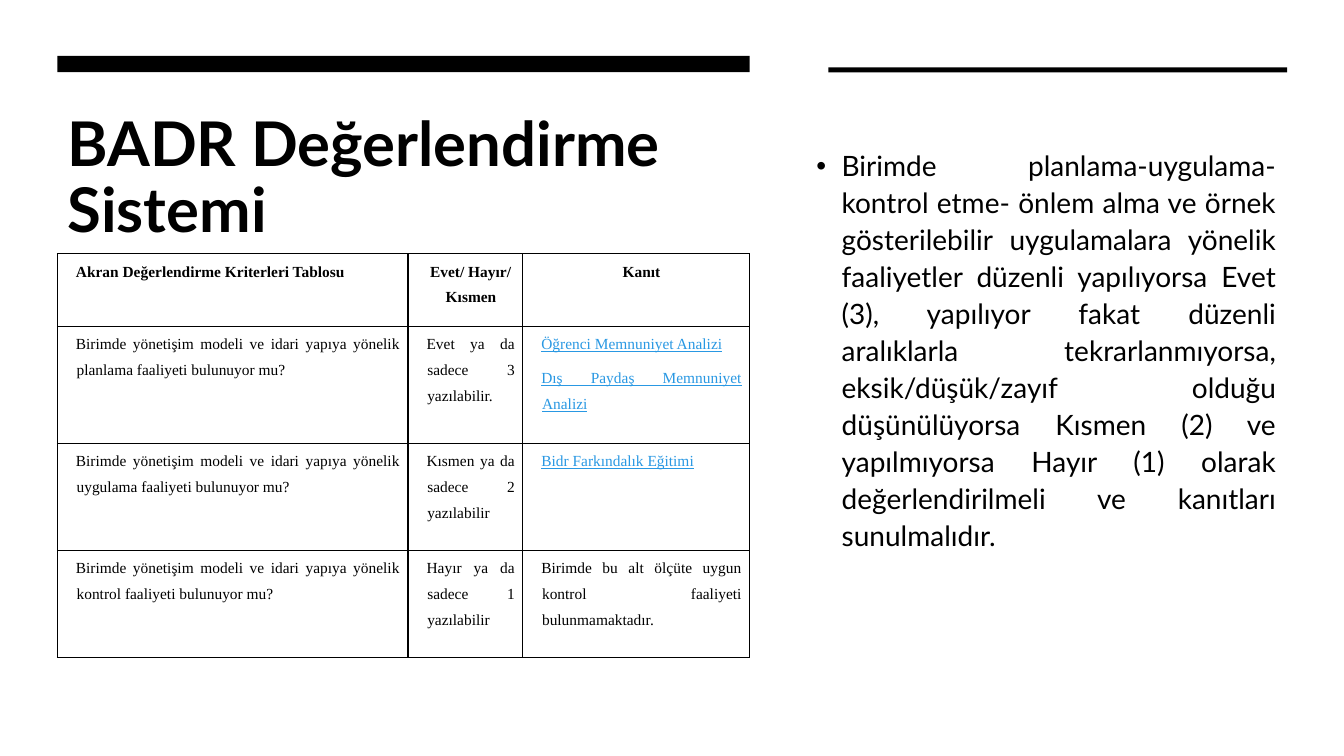
from lxml import etree
from pptx import Presentation
from pptx.dml.color import RGBColor
from pptx.enum.shapes import MSO_SHAPE
from pptx.enum.text import MSO_ANCHOR, MSO_AUTO_SIZE, PP_ALIGN
from pptx.oxml.ns import qn
from pptx.util import Pt

BLACK = RGBColor(0x00, 0x00, 0x00)
WHITE = RGBColor(0xFF, 0xFF, 0xFF)
LINK_BLUE = RGBColor(0x29, 0x98, 0xE3)
RECTANGLE = MSO_SHAPE.RECTANGLE
TOP = MSO_ANCHOR.TOP
NO_AUTOFIT = MSO_AUTO_SIZE.NONE
LEFT, CENTER, JUSTIFY = PP_ALIGN.LEFT, PP_ALIGN.CENTER, PP_ALIGN.JUSTIFY

HEADING_FONT = "Lato"
TABLE_FONT = "Times New Roman"

TITLE = "BADR Değerlendirme Sistemi"
EXPLANATION = (
    "Birimde planlama-uygulama-kontrol etme- önlem alma ve örnek gösterilebilir "
    "uygulamalara yönelik faaliyetler düzenli yapılıyorsa Evet (3), yapılıyor fakat "
    "düzenli aralıklarla tekrarlanmıyorsa, eksik/düşük/zayıf olduğu düşünülüyorsa "
    "Kısmen (2) ve yapılmıyorsa Hayır (1) olarak değerlendirilmeli ve kanıtları "
    "sunulmalıdır."
)
QUESTION = "Birimde yönetişim modeli ve idari yapıya yönelik {} faaliyeti bulunuyor mu?"
HEADERS = ["Akran Değerlendirme Kriterleri Tablosu", "Evet/ Hayır/ Kısmen", "Kanıt"]
CRITERIA = [
    ("planlama", "Evet ya da sadece 3 yazılabilir.",
     ["Öğrenci Memnuniyet Analizi", "Dış Paydaş Memnuniyet Analizi"], LINK_BLUE),
    ("uygulama", "Kısmen ya da sadece 2 yazılabilir",
     ["Bidr Farkındalık Eğitimi"], LINK_BLUE),
    ("kontrol", "Hayır ya da sadece 1 yazılabilir",
     ["Birimde bu alt ölçüte uygun kontrol faaliyeti bulunmamaktadır."], BLACK),
]
COLUMN_WIDTHS = [250.5, 82, 162]
ROW_HEIGHTS = [52, 83.5, 76.5, 76.5]


def place(shape, box):
    shape.left, shape.top, shape.width, shape.height = (Pt(length) for length in box)


def indent(paragraph, margin, first_line):
    properties = paragraph._p.get_or_add_pPr()
    properties.set("marL", str(Pt(margin)))
    properties.set("indent", str(Pt(first_line)))
    return properties


def add_run(paragraph, text, font_name, size, color=BLACK, bold=False):
    run = paragraph.add_run()
    run.text = text
    run.font.name = font_name
    run.font.size = Pt(size)
    run.font.bold = bold
    run.font.color.rgb = color
    return run


def add_bar(slide, box):
    bar = slide.shapes.add_shape(RECTANGLE, *(Pt(length) for length in box))
    bar.shadow.inherit = False
    bar.fill.solid()
    bar.fill.fore_color.rgb = BLACK
    bar.line.fill.background()


def fill_placeholder(placeholder, box, text, size, bold, alignment, spacing):
    place(placeholder, box)
    frame = placeholder.text_frame
    frame.word_wrap = True
    frame.auto_size = NO_AUTOFIT
    frame.vertical_anchor = TOP
    paragraph = frame.paragraphs[0]
    paragraph.alignment = alignment
    paragraph.line_spacing = spacing
    add_run(paragraph, text, HEADING_FONT, size, bold=bold)
    return paragraph


def add_cell_borders(cell):
    properties = cell._tc.get_or_add_tcPr()
    for position, side in enumerate(("a:lnL", "a:lnR", "a:lnT", "a:lnB")):
        line = etree.Element(qn(side), w=str(Pt(1)))
        fill = etree.SubElement(line, qn("a:solidFill"))
        etree.SubElement(fill, qn("a:srgbClr"), val=str(BLACK))
        properties.insert(position, line)


def fill_cell(cell, texts, color=BLACK, bold=False, alignment=JUSTIFY):
    cell.margin_left = cell.margin_right = Pt(5.75)
    cell.margin_top, cell.margin_bottom = Pt(0.7), Pt(0)
    cell.vertical_anchor = TOP
    cell.fill.solid()
    cell.fill.fore_color.rgb = WHITE
    add_cell_borders(cell)
    frame = cell.text_frame
    for index, text in enumerate(texts):
        paragraph = frame.add_paragraph() if index else frame.paragraphs[0]
        paragraph.alignment = alignment
        paragraph.line_spacing = 1.5
        paragraph.space_after = Pt(5.8)
        indent(paragraph, 8, -0.5)
        run = add_run(paragraph, text, TABLE_FONT, 11, color, bold)
        run.font.underline = color == LINK_BLUE


def add_criteria_table(slide, left, top):
    frame = slide.shapes.add_table(
        len(ROW_HEIGHTS), len(COLUMN_WIDTHS), Pt(left), Pt(top),
        Pt(sum(COLUMN_WIDTHS)), Pt(sum(ROW_HEIGHTS)))
    table = frame.table
    table.horz_banding = False
    for column, width in zip(table.columns, COLUMN_WIDTHS):
        column.width = Pt(width)
    for row, height in zip(table.rows, ROW_HEIGHTS):
        row.height = Pt(height)
    for column, header in enumerate(HEADERS):
        fill_cell(table.cell(0, column), [header], bold=True,
                  alignment=CENTER if column else JUSTIFY)
    for row, (activity, answer, evidence, color) in enumerate(CRITERIA, 1):
        fill_cell(table.cell(row, 0), [QUESTION.format(activity)])
        fill_cell(table.cell(row, 1), [answer])
        fill_cell(table.cell(row, 2), evidence, color)


def add_criteria_region(slide, left, top, width):
    add_bar(slide, (left, top, width, 11.5))
    fill_placeholder(slide.shapes.title, (left, top + 37, width + 1.5, 104.5),
                     TITLE, 44, True, LEFT, 0.9)
    add_criteria_table(slide, left, top + 141.3)


def add_explanation_region(slide, left, top, width):
    add_bar(slide, (left + 15.7, top, width - 15, 3.6))
    paragraph = fill_placeholder(slide.placeholders[1], (left, top + 52, width, 399.5),
                                 EXPLANATION, 20, False, JUSTIFY, 1.1)
    paragraph.space_before = Pt(10)
    properties = indent(paragraph, 18, -18)
    etree.SubElement(properties, qn("a:buFont"), typeface="Arial")
    etree.SubElement(properties, qn("a:buChar"), char="•")


def main():
    presentation = Presentation()
    presentation.slide_width = Pt(960)
    presentation.slide_height = Pt(540)
    slide = presentation.slides.add_slide(presentation.slide_layouts[1])
    slide.background.fill.solid()
    slide.background.fill.fore_color.rgb = WHITE
    add_criteria_region(slide, 41, 40, 494.5)
    add_explanation_region(slide, 576, 48.2, 342.7)
    presentation.save("out.pptx")


if __name__ == "__main__":
    main()
